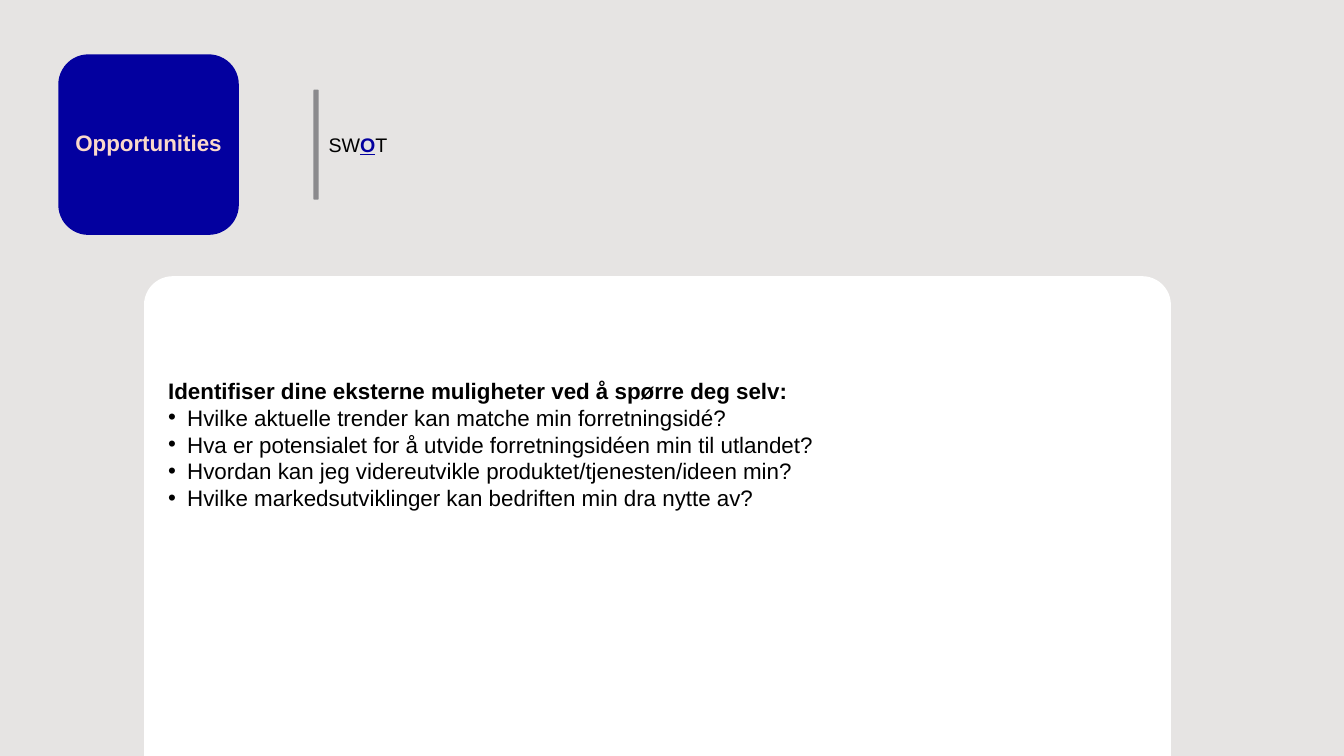
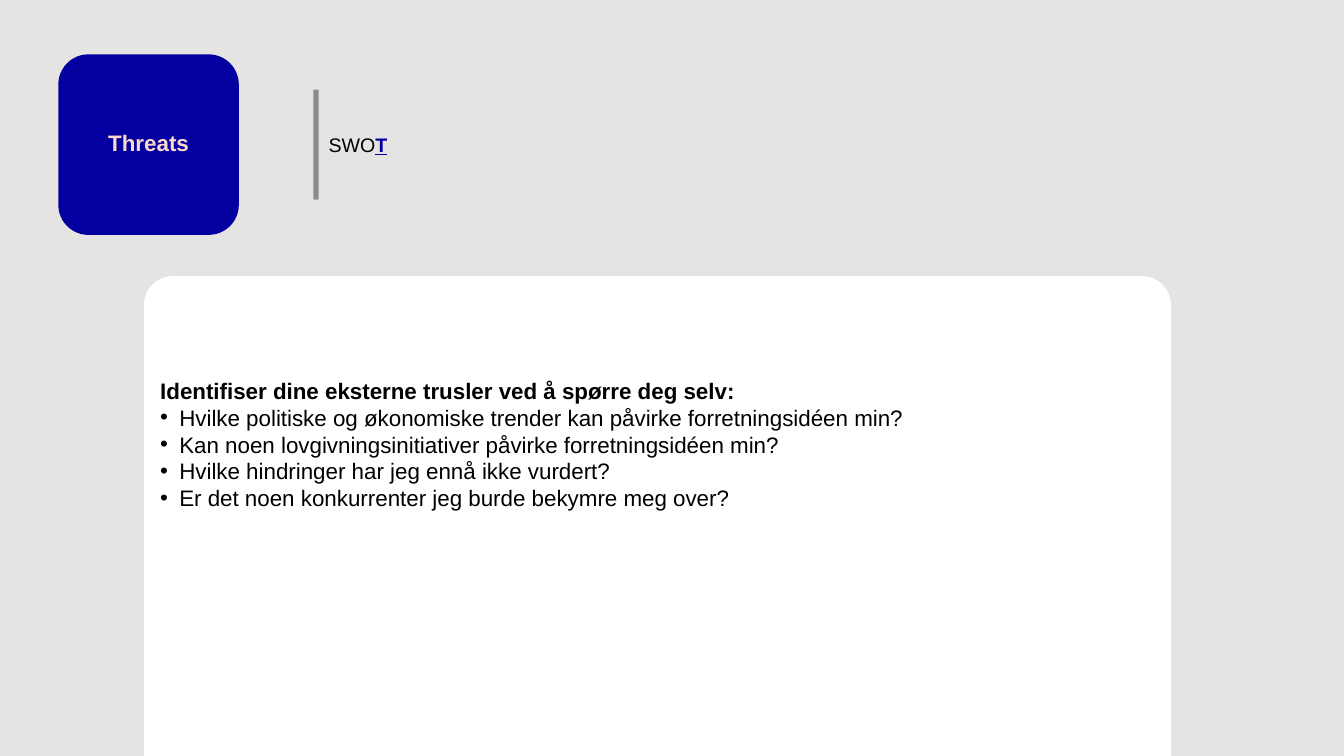
"""Build two SWOT slides: opportunities and threats."""
from lxml import etree
from pptx import Presentation
from pptx.dml.color import RGBColor
from pptx.enum.shapes import MSO_SHAPE as Preset
from pptx.enum.text import MSO_ANCHOR as Anchor, MSO_AUTO_SIZE as AutoSize, PP_ALIGN as Align
from pptx.oxml.ns import qn
from pptx.util import Cm, Pt

FONT = "Arial"
COLORS = {
    "background": "E6E4E3",
    "panel": "FFFFFF",
    "accent": "03009F",
    "title": "FBD9CA",
    "bar": "8B8A8D",
    "text": "000000",
}
TOPICS = [
    {
        "title": "Opportunities",
        "letters": ("SW", "O", "T"),
        "indent": 0.2,
        "heading": "Identifiser dine eksterne muligheter ved å spørre deg selv:",
        "questions": [
            "Hvilke aktuelle trender kan matche min forretningsidé?",
            "Hva er potensialet for å utvide forretningsidéen min til utlandet?",
            "Hvordan kan jeg videreutvikle produktet/tjenesten/ideen min?",
            "Hvilke markedsutviklinger kan bedriften min dra nytte av?",
        ],
    },
    {
        "title": "Threats",
        "letters": ("SWO", "T", ""),
        "indent": 0,
        "heading": "Identifiser dine eksterne trusler ved å spørre deg selv:",
        "questions": [
            "Hvilke politiske og økonomiske trender kan påvirke forretningsidéen min?",
            "Kan noen lovgivningsinitiativer påvirke forretningsidéen min?",
            "Hvilke hindringer har jeg ennå ikke vurdert?",
            "Er det noen konkurrenter jeg burde bekymre meg over?",
        ],
    },
]

WIDTH, HEIGHT = 33.87, 19.05
PANEL_LEFT, PANEL_TOP, PANEL_WIDTH = 3.63, 6.96, 25.88
PANEL = (PANEL_LEFT, PANEL_TOP, PANEL_WIDTH, HEIGHT - PANEL_TOP)
QUESTIONS = (PANEL_LEFT, 6.99, PANEL_WIDTH, 9.09)
BAND_HEIGHT = 1.09
BAND = (PANEL_LEFT, HEIGHT - BAND_HEIGHT, PANEL_WIDTH, BAND_HEIGHT)
BADGE = (1.47, 1.37, 4.55, 4.55)
BAR = (7.9, 2.26, 0.13, 2.77)
LETTERS = (8.03, 3.23, 9.65, 0.86)
HANGING = 0.48


def box(values):
    return [Cm(value) for value in values]


def add_block(slide, preset, area, color=None, rounding=None):
    shape = slide.shapes.add_shape(preset, *box(area))
    shape.shadow.inherit = False
    shape.line.fill.background()
    if color:
        shape.fill.solid()
        shape.fill.fore_color.rgb = RGBColor.from_string(COLORS[color])
    else:
        shape.fill.background()
    if rounding is not None:
        shape.adjustments[0] = rounding
    return shape


def add_run(paragraph, text, size=16, color="text", bold=False, underline=False):
    run = paragraph.add_run()
    run.text = text
    font = run.font
    font.name, font.size = FONT, Pt(size)
    font.bold, font.underline = bold, underline
    font.color.rgb = RGBColor.from_string(COLORS[color])


def set_indent(paragraph, left, bullet=False):
    properties = paragraph._p.get_or_add_pPr()
    hanging = HANGING if bullet else 0
    properties.set("marL", str(Cm(left + hanging)))
    properties.set("indent", str(Cm(-hanging)))
    if bullet:
        etree.SubElement(properties, qn("a:buFont")).set("typeface", FONT)
        etree.SubElement(properties, qn("a:buChar")).set("char", "•")


def format_title(slide, text):
    title = slide.shapes.title
    title.left, title.top, title.width, title.height = box(BADGE)
    title.element.getparent().append(title.element)
    frame = title.text_frame
    frame.auto_size = AutoSize.NONE
    frame.word_wrap = True
    frame.vertical_anchor = Anchor.MIDDLE
    frame.margin_left = frame.margin_right = 0
    paragraph = frame.paragraphs[0]
    paragraph.alignment = Align.CENTER
    paragraph.line_spacing = 0.9
    paragraph.space_before = Pt(0)
    add_run(paragraph, text, color="title", bold=True)


def add_questions(slide, topic):
    frame = add_block(slide, Preset.ROUNDED_RECTANGLE, QUESTIONS, rounding=0.06).text_frame
    frame.word_wrap = True
    frame.vertical_anchor = Anchor.MIDDLE
    frame.margin_bottom = Cm(0.81)
    for index, text in enumerate([topic["heading"], *topic["questions"]]):
        paragraph = frame.add_paragraph() if index else frame.paragraphs[0]
        paragraph.alignment = Align.LEFT
        set_indent(paragraph, topic["indent"], bullet=index > 0)
        add_run(paragraph, text, bold=index == 0)


def add_letters(slide, letters):
    frame = slide.shapes.add_textbox(*box(LETTERS)).text_frame
    frame.word_wrap = True
    before, current, after = letters
    paragraph = frame.paragraphs[0]
    add_run(paragraph, before, size=14)
    add_run(paragraph, current, size=14, color="accent", bold=True, underline=True)
    if after:
        add_run(paragraph, after, size=14)


def add_topic(presentation, topic):
    slide = presentation.slides.add_slide(presentation.slide_layouts.get_by_name("Title Only"))
    add_block(slide, Preset.ROUNDED_RECTANGLE, PANEL, "panel", 0.06)
    add_questions(slide, topic)
    add_block(slide, Preset.ROUNDED_RECTANGLE, BADGE, "accent")
    format_title(slide, topic["title"])
    add_block(slide, Preset.ROUNDED_RECTANGLE, BAR, "bar")
    add_block(slide, Preset.RECTANGLE, BAND, "panel")
    add_letters(slide, topic["letters"])


def main():
    presentation = Presentation()
    presentation.slide_width, presentation.slide_height = Cm(WIDTH), Cm(HEIGHT)
    background = presentation.slide_master.background.fill
    background.solid()
    background.fore_color.rgb = RGBColor.from_string(COLORS["background"])
    for topic in TOPICS:
        add_topic(presentation, topic)
    presentation.save("out.pptx")


if __name__ == "__main__":
    main()
